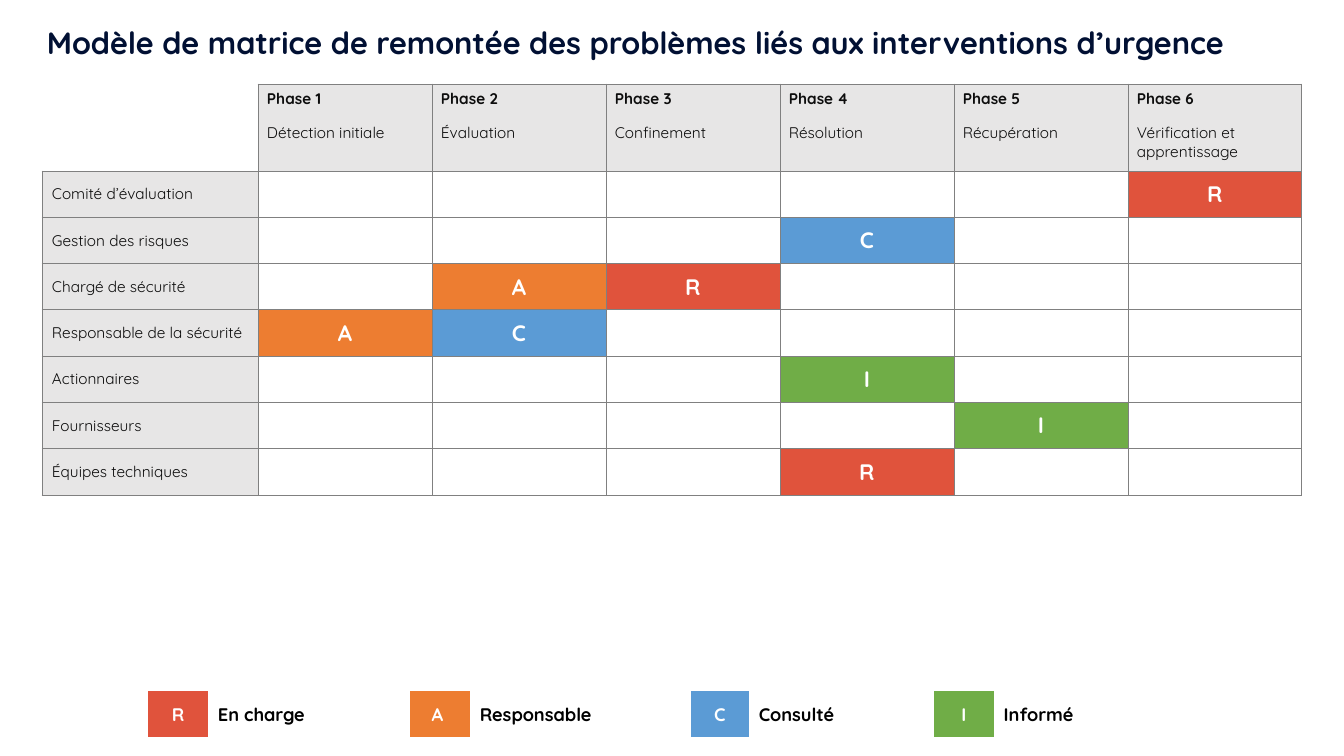
"""Build the RACI escalation matrix slide for emergency responses."""
from lxml import etree
from pptx import Presentation, util as u
from pptx.dml.color import RGBColor
from pptx.enum import text
from pptx.oxml import ns

FONT, GREY, WHITE, INK = "Quicksand", "E7E6E6", "FFFFFF", "0D0D0D"
ROLES = {"R": "E0533C", "A": "ED7D31", "C": "5B9BD5", "I": "70AD47"}
MIDDLE, TOP = text.MSO_ANCHOR.MIDDLE, text.MSO_ANCHOR.TOP
LEFT, CENTER = text.PP_ALIGN.LEFT, text.PP_ALIGN.CENTER
PX = 914400 / 100.8

PHASES = ["Détection initiale", "Évaluation", "Confinement", "Résolution",
          "Récupération", "Vérification et apprentissage"]
TEAMS = [
    ("Comité d’évaluation", {6: "R"}),
    ("Gestion des risques", {4: "C"}),
    ("Chargé de sécurité", {2: "A", 3: "R"}),
    ("Responsable de la sécurité", {1: "A", 2: "C"}),
    ("Actionnaires", {4: "I"}),
    ("Fournisseurs", {5: "I"}),
    ("Équipes techniques", {4: "R"}),
]
LEGEND = [("R", "En charge"), ("A ", "Responsable"), ("C", "Consulté"), ("I", "Informé")]


def new_table(left, top, widths, heights):
    size = [u.Emu(round(n * PX)) for n in (left, top, sum(widths), sum(heights))]
    table = s.shapes.add_table(len(heights), len(widths), *size).table
    table.first_row = table.horz_banding = False
    for column, width in zip(table.columns, widths):
        column.width = u.Emu(round(width * PX))
    for row, height in zip(table.rows, heights):
        row.height = u.Emu(round(height * PX))
    return table


def set_cell(cell, words, fill, size=11, color=INK, bold=False, align=LEFT,
             anchor=MIDDLE, margins=(0, 0, 0, 0), sides="LRTB"):
    tcPr = cell._tc.get_or_add_tcPr()
    for side in "LRTB":
        ln = etree.SubElement(tcPr, ns.qn(f"a:ln{side}"), w=str(u.Pt(0.5)))
        if side in sides:
            line = etree.SubElement(ln, ns.qn("a:solidFill"))
            etree.SubElement(line, ns.qn("a:srgbClr"), val="808080")
        else:
            etree.SubElement(ln, ns.qn("a:noFill"))
    cell.fill.solid()
    cell.fill.fore_color.rgb = RGBColor.from_string(fill)
    cell.vertical_anchor = anchor
    cell.margin_left, cell.margin_top, cell.margin_right, cell.margin_bottom = [
        u.Emu(round(m * PX)) for m in margins]
    p = cell.text_frame.paragraphs[0]
    p.text, p.alignment = words, align
    p.font.name, p.font.size, p.font.bold = FONT, u.Pt(size), bold
    p.font.color.rgb = RGBColor.from_string(color)


prs = Presentation()
prs.slide_width, prs.slide_height = u.Emu(round(1344 * PX)), u.Emu(round(756 * PX))
s = prs.slides.add_slide(prs.slide_layouts[6])

title = s.shapes.add_textbox(*[u.Emu(round(n * PX)) for n in (37, 19, 1265, 47)])
tf = title.text_frame
tf.word_wrap = True
p = tf.paragraphs[0]
p.text = "Modèle de matrice de remontée des problèmes liés aux interventions d’urgence"
p.font.name, p.font.size, p.font.bold = FONT, u.Pt(22), True
p.font.color.rgb = RGBColor.from_string("011033")

matrix = new_table(42, 84, [216] + [174] * 6, [29, 58] + [324 / 7] * len(TEAMS))
set_cell(matrix.cell(0, 0), "", WHITE, sides="R")
set_cell(matrix.cell(1, 0), "", WHITE, sides="RB")
for col, phase in enumerate(PHASES, 1):
    set_cell(matrix.cell(0, col), f"Phase {col}", GREY, bold=True,
             margins=(9, 1, 1, 0), sides="LRT")
    set_cell(matrix.cell(1, col), phase, GREY, anchor=TOP,
             margins=(9, 10, 1, 10), sides="LRB")
for row, (team, roles) in enumerate(TEAMS, 2):
    set_cell(matrix.cell(row, 0), team, GREY, margins=(10, 0, 0, 0))
    for col in range(1, len(PHASES) + 1):
        role = roles.get(col, "")
        set_cell(matrix.cell(row, col), role, ROLES.get(role, WHITE), size=16,
                 color=WHITE, bold=True, align=CENTER)

legend = new_table(148, 691, [60, 202, 60, 221, 58, 185, 60, 202], [46])
for i, (letter, meaning) in enumerate(LEGEND):
    set_cell(legend.cell(0, 2 * i), letter, ROLES[letter[0]], size=13, color=WHITE,
             bold=True, align=CENTER, margins=(1, 1, 1, 0), sides="")
    set_cell(legend.cell(0, 2 * i + 1), meaning, WHITE, size=13, color="000000",
             bold=True, margins=(10, 1, 1, 0), sides="")

prs.save("out.pptx")
